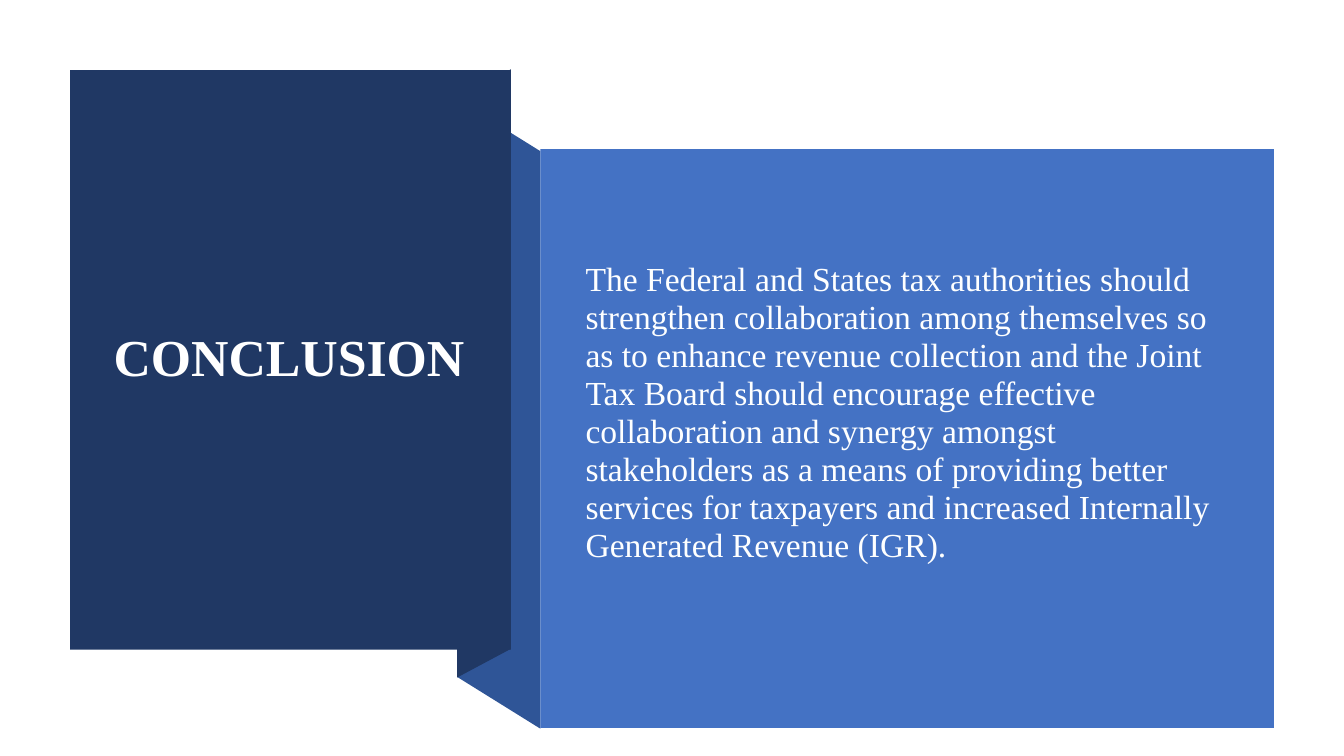
from dataclasses import dataclass

from pptx import Presentation
from pptx.dml.color import RGBColor
from pptx.enum.shapes import MSO_SHAPE
from pptx.enum.text import MSO_ANCHOR, PP_ALIGN
from pptx.util import Pt


@dataclass(frozen=True)
class Theme:
    navy: str = "203864"
    fold: str = "2F5597"
    blue: str = "4472C4"
    white: str = "FFFFFF"
    body_white: str = "FEFFFF"
    font: str = "Times New Roman"
    title_size: float = 37
    body_size: float = 24


@dataclass(frozen=True)
class Box:
    left: float
    top: float
    width: float
    height: float

    @property
    def right(self):
        return self.left + self.width

    @property
    def bottom(self):
        return self.top + self.height

    def inset(self, across, down):
        return Box(self.left + across, self.top + down,
                   self.width - 2 * across, self.height - 2 * down)

    def lengths(self):
        return [Pt(value) for value in (self.left, self.top, self.width, self.height)]


THEME = Theme()


def paint(shape, color):
    shape.shadow.inherit = False
    shape.fill.solid()
    shape.fill.fore_color.rgb = RGBColor.from_string(color)
    shape.line.fill.background()


def add_panel(page, box, color):
    paint(page.shapes.add_shape(MSO_SHAPE.RECTANGLE, *box.lengths()), color)


def add_fold(page, box, left_drop, right_drop, color):
    """Draw a slanted strip; the drops move each upright side down from the box top."""
    side = box.height - max(left_drop, right_drop)
    corners = [(box.left, box.top + left_drop),
               (box.right, box.top + right_drop),
               (box.right, box.top + right_drop + side),
               (box.left, box.top + left_drop + side)]
    start, *others = [(Pt(x), Pt(y)) for x, y in corners]
    builder = page.shapes.build_freeform(*start, scale=1.0)
    builder.add_line_segments(others, close=True)
    paint(builder.convert_to_shape(), color)


def add_text(page, box, text, *, size, color, bold=False, line_spacing=0.9,
             bottom_margin=3.6):
    frame = page.shapes.add_textbox(*box.lengths()).text_frame
    frame.word_wrap = True
    frame.vertical_anchor = MSO_ANCHOR.MIDDLE
    frame.margin_bottom = Pt(bottom_margin)
    para = frame.paragraphs[0]
    para.alignment = PP_ALIGN.LEFT
    para.line_spacing = line_spacing
    span = para.add_run()
    span.text = text
    span.font.name = THEME.font
    span.font.size = Pt(size)
    span.font.bold = bold
    span.font.color.rgb = RGBColor.from_string(color)


def add_ribbon(page, title_box, body_box):
    """Fold the ribbon behind the title panel and on to the body panel."""
    left = title_box.right - 38.5
    top = title_box.top + 21
    add_fold(page, Box(left, top, body_box.left - left, body_box.bottom - top + 0.5),
             0, 37, THEME.fold)
    add_fold(page, Box(left, title_box.top - 0.5, 38.5, title_box.height + 20.5),
             20.5, 0, THEME.navy)


def add_title_panel(page, box, text):
    add_panel(page, box, THEME.navy)
    add_text(page, box.inset(24, 27), text, size=THEME.title_size,
             color=THEME.white, bold=True)


def add_body_panel(page, box, text):
    add_panel(page, box, THEME.blue)
    add_text(page, box.inset(25.2, 28.8), text, size=THEME.body_size,
             color=THEME.body_white, line_spacing=0.94, bottom_margin=40)


def add_conclusion_slide(deck, title, body):
    page = deck.slides.add_slide(deck.slide_layouts[6])
    title_box = Box(50, 50, 315, 414)
    body_box = Box(386, 106.5, 524, 413.5)
    add_ribbon(page, title_box, body_box)
    add_title_panel(page, title_box, title)
    add_body_panel(page, body_box, body)


def main():
    deck = Presentation()
    deck.slide_width, deck.slide_height = Pt(960), Pt(540)
    add_conclusion_slide(
        deck,
        "CONCLUSION",
        "The Federal and States tax authorities should strengthen collaboration "
        "among themselves so as to enhance revenue collection and the Joint Tax "
        "Board should encourage effective collaboration and synergy amongst "
        "stakeholders as a means of providing better services for taxpayers and "
        "increased Internally Generated Revenue (IGR).",
    )
    deck.save("out.pptx")


if __name__ == "__main__":
    main()
